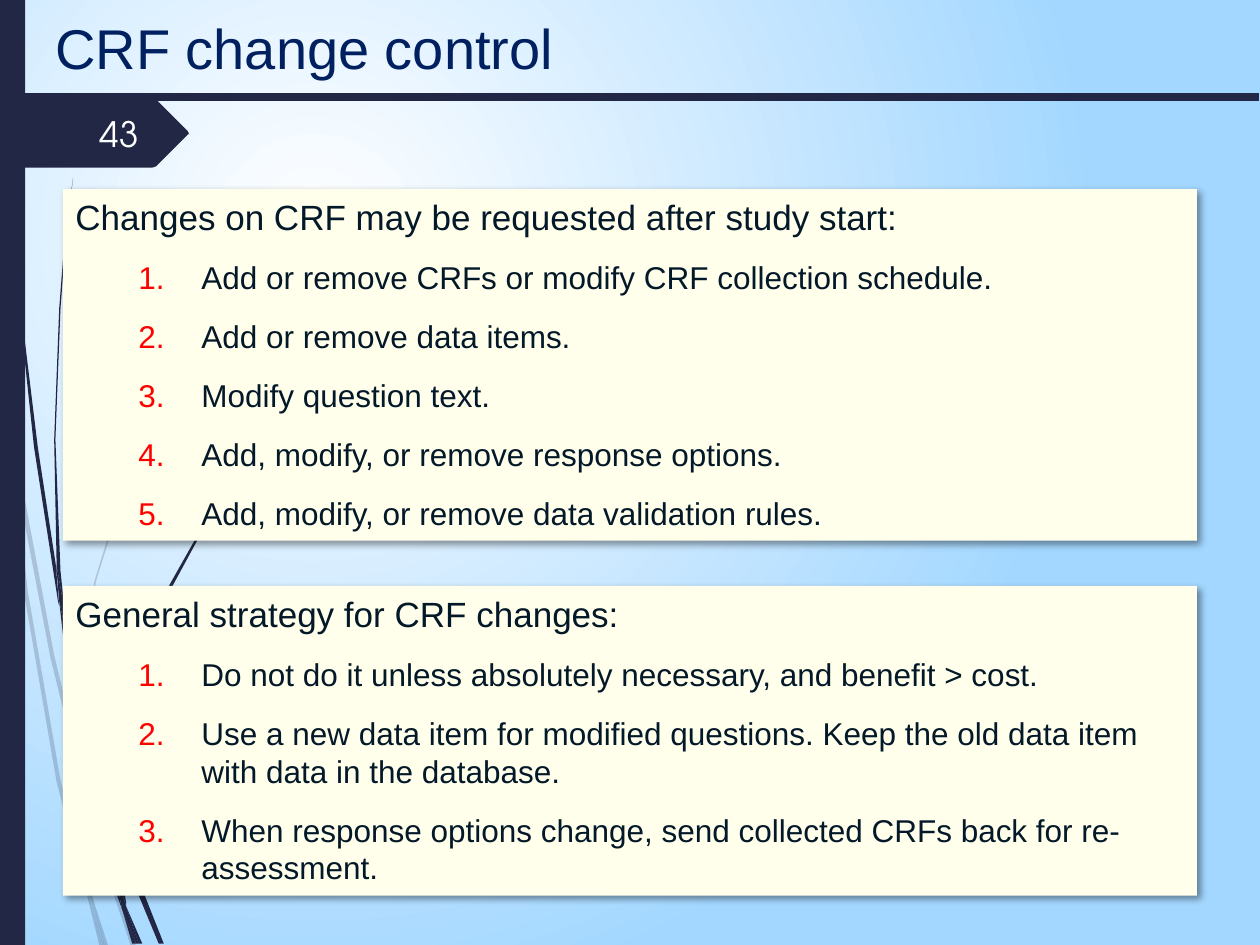
from dataclasses import dataclass

from lxml import etree
from pptx import Presentation
from pptx.dml.color import RGBColor
from pptx.enum import shapes, text
from pptx.oxml import parse_xml
from pptx.oxml.ns import nsdecls, qn
from pptx.util import Inches, Pt


@dataclass(frozen=True)
class Theme:
    navy: str = "212745"
    title: str = "002060"
    ink: str = "031828"
    panel: str = "FFFFEB"
    marker: str = "FF0000"
    number: str = "FEFFFF"
    sky: tuple = ("FFFFFF", "A3D7FF")
    font: str = "Arial"
    number_font: str = "TeX Gyre Adventor"
    title_size: int = 32
    head_size: int = 20
    item_size: int = 18


THEME = Theme()

# Outlines of the grass blades, in hundredths of an inch
PALE_BLADES = [
    [(8, 350), (6, 322), (0, 282), (0, 299), (7, 344)],
    [(40, 522), (59, 599), (59, 586), (43, 520), (10, 345), (12, 376)],
    [(64, 607), (61, 596), (61, 610), (85, 694), (104, 751), (108, 751), (88, 692)],
    [(83, 751), (86, 751), (73, 711)],
    [(64, 683), (48, 619), (22, 469), (12, 376), (8, 350), (19, 470), (45, 621),
     (64, 693), (70, 714), (69, 707)],
    [(58, 599), (60, 646), (64, 683), (67, 692), (73, 711), (72, 706), (63, 646),
     (61, 610), (61, 608)],
    [(61, 584), (76, 462), (111, 349), (159, 245), (187, 198), (201, 175), (217, 154),
     (217, 153), (201, 175), (186, 197), (158, 244), (110, 348), (75, 461), (59, 584),
     (59, 586), (61, 596)],
    [(70, 714), (79, 751), (82, 751)],
    [(67, 692), (65, 683), (69, 707), (70, 714), (82, 751), (83, 751), (73, 711)],
]
DARK_BLADES = [
    [(5, 110), (14, 233), (27, 355), (46, 477), (47, 481), (45, 457), (45, 453),
     (30, 355), (15, 232), (6, 109), (4, 48), (3, 0), (2, 0), (3, 48)],
    [(73, 592), (88, 645), (88, 633), (88, 631), (77, 590), (50, 472), (53, 505)],
    [(94, 649), (91, 641), (91, 656), (109, 708), (126, 749), (130, 749), (113, 706)],
    [(91, 691), (81, 657), (60, 556), (53, 505), (47, 477), (56, 557), (77, 659),
     (92, 708), (97, 722), (96, 717)],
    [(50, 472), (48, 453), (44, 349), (48, 245), (52, 193), (58, 141), (51, 193),
     (47, 245), (43, 349), (45, 449), (49, 472)],
    [(110, 749), (113, 749), (100, 719)],
    [(47, 477), (53, 505), (50, 472), (49, 472), (45, 449), (45, 453)],
    [(91, 633), (103, 552), (131, 476), (169, 406), (191, 374), (203, 359), (216, 344),
     (215, 344), (203, 358), (191, 373), (168, 405), (129, 474), (101, 551), (88, 631),
     (91, 641)],
    [(97, 722), (105, 749), (108, 749)],
    [(88, 645), (91, 691), (96, 706), (100, 719), (100, 716), (91, 656), (90, 651)],
    [(96, 706), (91, 691), (96, 717), (97, 722), (108, 749), (110, 749), (100, 719)],
]

PANELS = [
    (1.5, 2.79, "Changes on CRF may be requested after study start:", [
        "Add or remove CRFs or modify CRF collection schedule.",
        "Add or remove data items.",
        "Modify question text.",
        "Add, modify, or remove response options.",
        "Add, modify, or remove data validation rules.",
    ]),
    (4.65, 2.46, "General strategy for CRF changes:", [
        "Do not do it unless absolutely necessary, and benefit > cost.",
        "Use a new data item for modified questions. Keep the old data item "
        "with data in the database.",
        "When response options change, send collected CRFs back for re-assessment.",
    ]),
]


def paint(shape, color):
    shape.shadow.inherit = False
    shape.fill.solid()
    shape.fill.fore_color.rgb = RGBColor.from_string(color)
    shape.line.fill.background()


def style(paragraph, size, color, font=THEME.font):
    paragraph.font.size = Pt(size)
    paragraph.font.name = font
    paragraph.font.color.rgb = RGBColor.from_string(color)


def add_outline(slide, points, color, left=0, top=0):
    """Closed outline; points are hundredths of an inch from left, top."""
    (x, y), *rest = points
    builder = slide.shapes.build_freeform(x, y, scale=Inches(0.01))
    builder.add_line_segments(rest, close=True)
    outline = builder.convert_to_shape(Inches(left), Inches(top))
    paint(outline, color)
    return outline


def add_label(slide, left, top, width, height, words):
    label = slide.shapes.add_textbox(Inches(left), Inches(top), Inches(width), Inches(height))
    label.text_frame.word_wrap = True
    label.text_frame.vertical_anchor = text.MSO_ANCHOR.MIDDLE
    label.text_frame.text = words
    return label.text_frame.paragraphs[0]


def add_background(slide):
    fill = slide.background.fill
    fill.gradient()
    for stop, color in zip(fill.gradient_stops, THEME.sky):
        stop.color.rgb = RGBColor.from_string(color)
    gradient = slide._element.find(".//" + qn("a:gradFill"))
    gradient.replace(gradient.find(qn("a:lin")), parse_xml(
        f'<a:path {nsdecls("a")} path="circle">'
        '<a:fillToRect l="50000" t="50000" r="100000" b="100000"/></a:path>'))


def add_grass(slide):
    for points in PALE_BLADES:
        blade = add_outline(slide, points, THEME.navy)
        tint = blade._element.spPr.find(".//" + qn("a:srgbClr"))
        etree.SubElement(tint, qn("a:alpha"), val="20000")
    for points in DARK_BLADES:
        add_outline(slide, points, THEME.navy)


def add_side_bar(slide, width, height):
    bar = slide.shapes.add_shape(shapes.MSO_SHAPE.RECTANGLE, 0, 0, Inches(width), Inches(height))
    paint(bar, THEME.navy)


def add_page_tag(slide, left, top, number):
    tag = [(0, 0), (121, 0), (124, 1), (149, 26), (149.5, 27.5), (149, 29),
           (124, 54), (121, 55), (0, 55)]
    add_outline(slide, tag, THEME.navy, left, top)
    page = add_label(slide, left + 0.56, top + 0.08, 0.64, 0.4, number)
    page.alignment = text.PP_ALIGN.RIGHT
    style(page, THEME.head_size, THEME.number, THEME.number_font)


def add_title(slide, left, top, width, height, words):
    rule_y = Inches(0.77)
    rule = slide.shapes.add_connector(
        shapes.MSO_CONNECTOR.STRAIGHT, Inches(0.09), rule_y, Inches(9.99), rule_y)
    rule.line.color.rgb = RGBColor.from_string(THEME.navy)
    rule.line.width = Pt(4.5)
    etree.SubElement(rule._element.spPr, qn("a:effectLst"))
    style(add_label(slide, left, top, width, height, words), THEME.title_size, THEME.title)


def add_panel(slide, left, top, width, height, heading, items):
    panel = slide.shapes.add_shape(
        shapes.MSO_SHAPE.RECTANGLE, Inches(left), Inches(top), Inches(width), Inches(height))
    paint(panel, THEME.panel)
    panel._element.spPr.find(qn("a:effectLst")).append(parse_xml(
        f'<a:outerShdw {nsdecls("a")} blurRad="{Pt(4)}" dist="{Pt(3)}" dir="2700000" '
        'algn="tl" rotWithShape="0"><a:srgbClr val="000000"><a:alpha val="40000"/>'
        '</a:srgbClr></a:outerShdw>'))
    frame = panel.text_frame
    frame.word_wrap = True
    frame.vertical_anchor = text.MSO_ANCHOR.TOP
    frame.text = "\n".join([heading, *items])
    head, *entries = frame.paragraphs
    for paragraph in frame.paragraphs:
        paragraph.alignment = text.PP_ALIGN.LEFT
        paragraph.space_after = Pt(6)
    style(head, THEME.head_size, THEME.ink)
    for entry in entries:
        entry.space_before = Pt(6)
        props = entry._p.get_or_add_pPr()
        props.set("marL", str(Inches(1)))
        props.set("indent", str(Inches(-0.5)))
        color = etree.SubElement(props, qn("a:buClr"))
        etree.SubElement(color, qn("a:srgbClr"), val=THEME.marker)
        etree.SubElement(props, qn("a:buFont"), typeface="+mj-lt")
        etree.SubElement(props, qn("a:buAutoNum"), type="arabicPeriod")
        style(entry, THEME.item_size, THEME.ink)


def main():
    deck = Presentation()
    deck.slide_width, deck.slide_height = Inches(10), Inches(7.5)
    slide = deck.slides.add_slide(deck.slide_layouts[6])
    add_background(slide)
    add_grass(slide)
    add_side_bar(slide, 0.2, 7.5)
    add_page_tag(slide, 0, 0.78, "43")
    add_title(slide, 0.34, 0.05, 9.53, 0.64, "CRF change control")
    for top, height, heading, items in PANELS:
        add_panel(slide, 0.5, top, 9, height, heading, items)
    deck.save("out.pptx")


if __name__ == "__main__":
    main()
